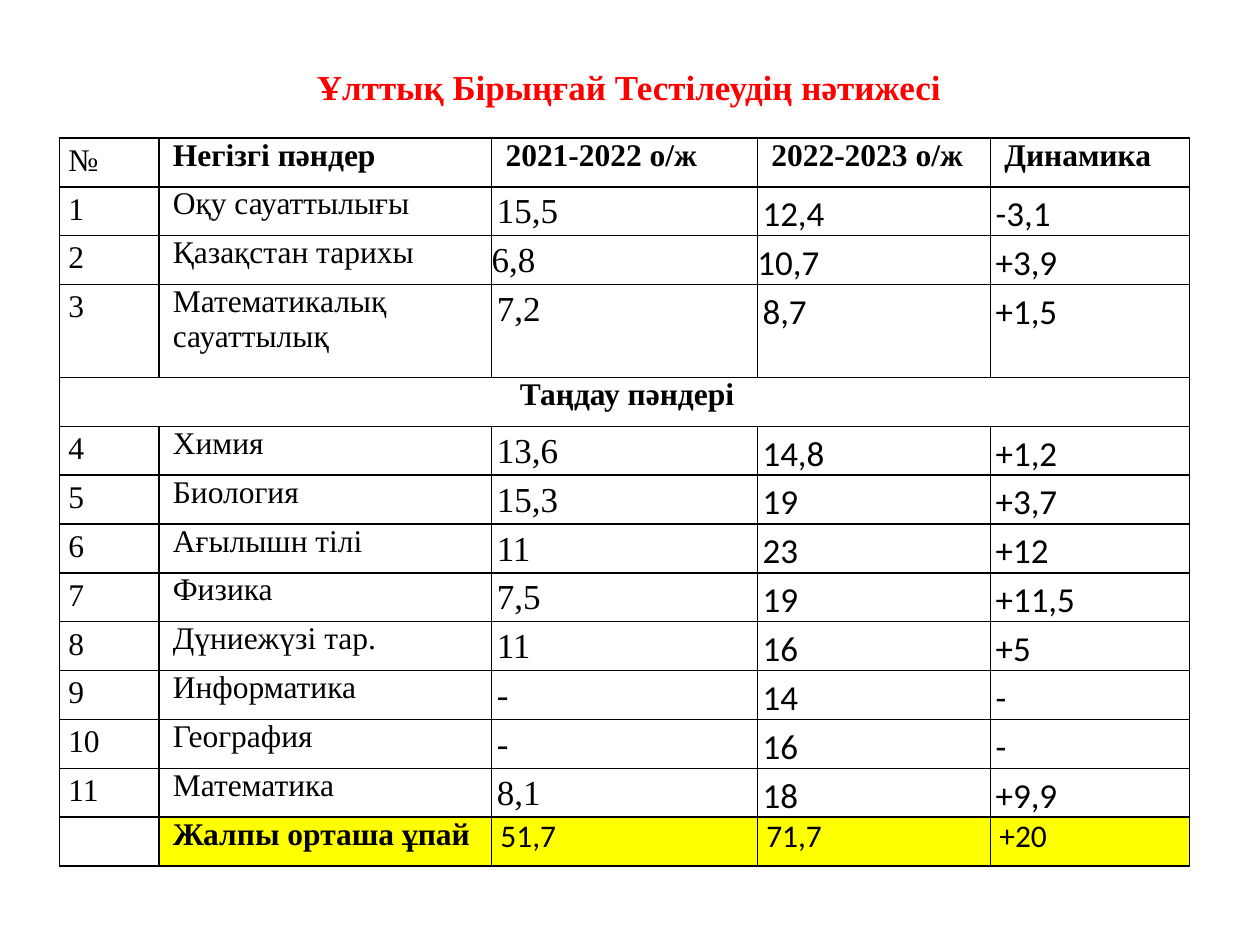
import pptx
import pptx.util
import pptx.dml.color
import pptx.enum.dml
import pptx.enum.text
import pptx.oxml.ns
from lxml import etree

Pt = pptx.util.Pt
ALIGN = pptx.enum.text.PP_ALIGN

# Content
TITLE = "Ұлттық Бірыңғай Тестілеудің нәтижесі"
ROWS = [
    ("№", "Негізгі пәндер", "2021-2022 о/ж", "2022-2023 о/ж", "Динамика"),
    ("1", "Оқу сауаттылығы", "15,5", "12,4", "-3,1"),
    ("2", "Қазақстан тарихы", "6,8", "10,7", "+3,9"),
    ("3", "Математикалық сауаттылық", "7,2", "8,7", "+1,5"),
    ("Таңдау пәндері", "", "", "", ""),
    ("4", "Химия", "13,6", "14,8", "+1,2"),
    ("5", "Биология", "15,3", "19", "+3,7"),
    ("6", "Ағылышн тілі", "11", "23", "+12"),
    ("7", "Физика", "7,5", "19", "+11,5"),
    ("8", "Дүниежүзі тар.", "11", "16", "+5"),
    ("9", "Информатика", "-", "14", "-"),
    ("10", "География", "-", "16", "-"),
    ("11", "Математика", "8,1", "18", "+9,9"),
    ("", "Жалпы орташа ұпай", "51,7", "71,7", "+20"),
]
HEADER, TALL, SECTION, TOTAL = 0, 3, 4, len(ROWS) - 1

# Layout and formats
COLORS = {"title": "FF0000", "text": "000000", "border": "000000", "total": "FFFF00"}
COLUMN_WIDTHS = (56.9, 190.1, 151.9, 133.2, 113.8)
ROW_HEIGHT, TALL_HEIGHT = 27.93, 53.1
SIDE_MARGIN, INDENT = 5.04, 2.88
SERIF, SANS = "Times New Roman", "Calibri"

NUMBER = {"font": {"name": SERIF, "size": Pt(18), "bold": False},
          "para": {"line_spacing": 1.15, "alignment": ALIGN.LEFT},
          "margin": SIDE_MARGIN, "indent": 0}
SUBJECT = {"font": {"name": SERIF, "size": Pt(18), "bold": False},
           "para": {"alignment": ALIGN.JUSTIFY},
           "margin": SIDE_MARGIN, "indent": INDENT}
HEADING = {**SUBJECT, "font": {**SUBJECT["font"], "bold": True}}
SECTION_HEADING = {**HEADING, "para": {"alignment": ALIGN.CENTER}}
LATEST = {"font": {"name": SANS, "size": Pt(20), "bold": False},
          "para": {"line_spacing": 1.15, "alignment": ALIGN.JUSTIFY},
          "margin": 0, "indent": INDENT}
EARLIER = {**LATEST, "font": {**LATEST["font"], "name": SERIF}}
TOTAL_SCORE = {"font": {"name": SANS, "size": Pt(18), "bold": False},
               "para": {"alignment": ALIGN.LEFT},
               "margin": SIDE_MARGIN, "indent": 0}
COLUMN_STYLES = (NUMBER, SUBJECT, EARLIER, LATEST, LATEST)


def color(name):
    return pptx.dml.color.RGBColor.from_string(COLORS[name])


def set_all(target, values):
    for name, value in values.items():
        setattr(target, name, value)


def cell_style(row, column):
    if row == SECTION:
        return SECTION_HEADING
    if row in (HEADER, TOTAL) and column == 1:
        return HEADING
    if row == HEADER and column > 1:
        return HEADING
    if row == TOTAL and column > 1:
        return TOTAL_SCORE
    style = COLUMN_STYLES[column]
    if row in (1, 2) and column in (2, 3):
        style = {**style, "para": {**style["para"], "alignment": ALIGN.LEFT}}
        if row == 2:
            style["indent"] = 0
    return style


def add_borders(cell):
    properties = cell._tc.get_or_add_tcPr()
    qn = pptx.oxml.ns.qn
    for position, side in enumerate(("lnL", "lnR", "lnT", "lnB")):
        line = etree.Element(qn("a:" + side), w=str(Pt(1)))
        fill = etree.SubElement(line, qn("a:solidFill"))
        etree.SubElement(fill, qn("a:srgbClr"), val=COLORS["border"])
        properties.insert(position, line)


def fill_cell(cell, text, style, highlighted):
    set_all(cell, {"margin_left": Pt(style["margin"]), "margin_right": Pt(style["margin"]),
                   "margin_top": 0, "margin_bottom": 0})
    if highlighted:
        cell.fill.solid()
        cell.fill.fore_color.rgb = color("total")
    else:
        cell.fill.background()
    add_borders(cell)
    para = cell.text_frame.paragraphs[0]
    set_all(para, style["para"])
    para._p.get_or_add_pPr().set("marL", str(Pt(style["indent"])))
    if text:
        span = para.add_run()
        span.text = text
        set_all(span.font, style["font"])
        span.font.color.rgb = color("text")


deck = pptx.Presentation()
set_all(deck, {"slide_width": Pt(720), "slide_height": Pt(540)})
page = deck.slides.add_slide(deck.slide_layouts[6])

# Title
box = page.shapes.add_textbox(Pt(106.5), Pt(34), Pt(506), Pt(31.5))
set_all(box.text_frame, {"word_wrap": True,
                         "auto_size": pptx.enum.text.MSO_AUTO_SIZE.SHAPE_TO_FIT_TEXT})
para = box.text_frame.paragraphs[0]
para.alignment = ALIGN.CENTER
span = para.add_run()
span.text = TITLE
set_all(span.font, {"name": SERIF, "size": Pt(20), "bold": True})
span.font.color.rgb = color("title")

# Results table
heights = [TALL_HEIGHT if row == TALL else ROW_HEIGHT for row in range(len(ROWS))]
table = page.shapes.add_table(len(ROWS), len(COLUMN_WIDTHS), Pt(34), Pt(78.8),
                              Pt(sum(COLUMN_WIDTHS)), Pt(sum(heights))).table
set_all(table, {"first_row": False, "horz_banding": False})
for column, width in zip(table.columns, COLUMN_WIDTHS):
    column.width = Pt(width)
for row, height in zip(table.rows, heights):
    row.height = Pt(height)
for row, texts in enumerate(ROWS):
    for column, text in enumerate(texts):
        fill_cell(table.cell(row, column), text, cell_style(row, column),
                  row == TOTAL and column > 0)
table.cell(SECTION, 0).merge(table.cell(SECTION, len(COLUMN_WIDTHS) - 1))

deck.save("out.pptx")
